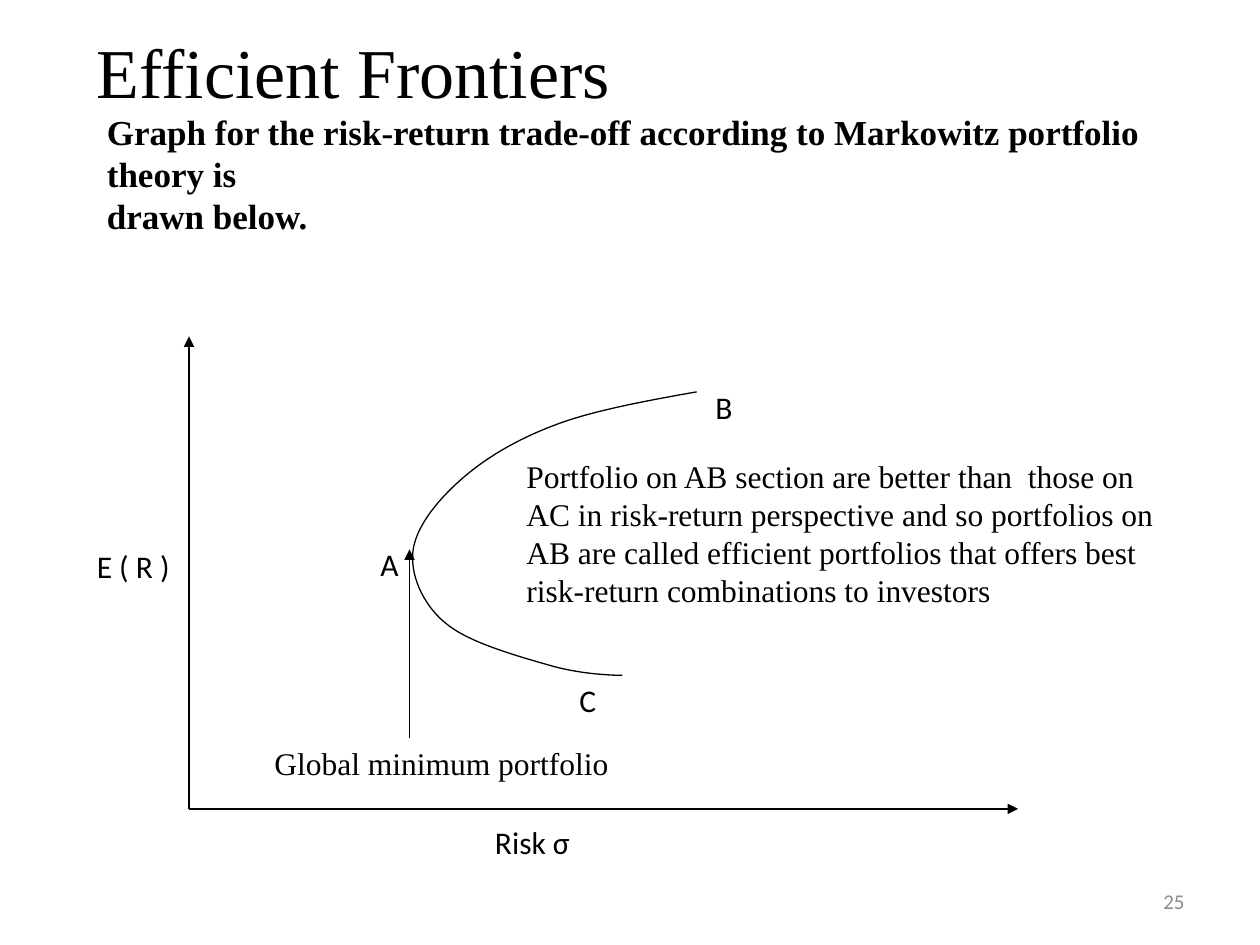
from dataclasses import dataclass

from lxml import etree
from pptx import Presentation
from pptx import util as u
from pptx.dml.color import RGBColor
from pptx.enum import shapes, text
from pptx.oxml.ns import qn


@dataclass(frozen=True)
class Theme:
    ink: RGBColor = RGBColor(0, 0, 0)
    muted: RGBColor = RGBColor(0x8C, 0x8C, 0x8C)
    serif: str = "Times New Roman"
    sans: str = "Calibri"
    title: int = 40
    lead: int = 20
    body: int = 18
    small: int = 12
    line: float = 0.75


def bezier_points(start, segments, steps=16):
    """Return points along joined cubic curves, each given as two controls and an end."""
    points = [start]
    for first, second, end in segments:
        for step in range(1, steps + 1):
            t = step / steps
            weights = ((1 - t) ** 3, 3 * t * (1 - t) ** 2, 3 * t * t * (1 - t), t ** 3)
            controls = (start, first, second, end)
            points.append(tuple(sum(w * c[axis] for w, c in zip(weights, controls))
                                for axis in (0, 1)))
        start = end
    return points


class Page:
    def __init__(self, slide, theme):
        self.shapes = slide.shapes
        self.theme = theme

    def text(self, place, *lines, size=None, font=None, color=None, bold=False,
             wrap=True, align=text.PP_ALIGN.LEFT, anchor=text.MSO_ANCHOR.TOP):
        box = self.shapes.add_textbox(*map(u.Inches, place))
        frame = box.text_frame
        frame.word_wrap = wrap
        frame.vertical_anchor = anchor
        frame.text = "\n".join(lines)
        for para in frame.paragraphs:
            para.alignment = align
            para.font.size = u.Pt(size or self.theme.body)
            para.font.name = font or self.theme.serif
            para.font.bold = bold
            para.font.color.rgb = color or self.theme.ink

    def label(self, place, words):
        self.text(place, words, font=self.theme.sans, wrap=False)

    def stroke(self, line):
        line.color.rgb = self.theme.ink
        line.width = u.Pt(self.theme.line)

    def arrow(self, start, end):
        arrow = self.shapes.add_connector(
            shapes.MSO_CONNECTOR.STRAIGHT, *map(u.Inches, start + end))
        self.stroke(arrow.line)
        properties = arrow._element.spPr
        etree.SubElement(properties.find(qn("a:ln")), qn("a:tailEnd"), type="triangle")
        etree.SubElement(properties, qn("a:effectLst"))

    def curve(self, start, segments):
        points = [tuple(map(u.Inches, point)) for point in bezier_points(start, segments)]
        builder = self.shapes.build_freeform(*points[0])
        builder.add_line_segments(points[1:], close=False)
        curve = builder.convert_to_shape()
        curve.fill.background()
        curve.shadow.inherit = False
        self.stroke(curve.line)


def main():
    deck = Presentation()
    deck.slide_width, deck.slide_height = u.Inches(10), u.Inches(7.5)
    theme = Theme()
    page = Page(deck.slides.add_slide(deck.slide_layouts[6]), theme)

    page.text((0.67, 0.17, 9, 0.78), "Efficient Frontiers", size=theme.title,
              anchor=text.MSO_ANCHOR.MIDDLE)
    page.text((0.75, 0.83, 8.6, 1.11),
              "Graph for the risk-return trade-off according to Markowitz portfolio theory is",
              "drawn below.", size=theme.lead, bold=True)

    origin = (1.5, 6.42)
    page.arrow(origin, (8.08, 6.42))
    page.arrow(origin, (1.5, 2.67))
    page.curve((5.53, 3.11), [
        ((5.14, 3.18), (4.75, 3.25), (4.44, 3.36)),
        ((4.14, 3.47), (3.89, 3.61), (3.69, 3.78)),
        ((3.5, 3.94), (3.31, 4.16), (3.28, 4.36)),
        ((3.25, 4.55), (3.35, 4.79), (3.53, 4.94)),
        ((3.71, 5.1), (4.12, 5.21), (4.36, 5.28)),
        ((4.6, 5.35), (4.85, 5.36), (4.94, 5.36)),
    ])
    page.arrow((3.25, 5.86), (3.25, 4.36))

    for place, words in (
        ((3.83, 6.48, 0.81, 0.4), "Risk σ"),
        ((0.67, 4.29, 0.86, 0.4), "E ( R )"),
        ((2.92, 4.28, 0.58, 0.4), "A"),
        ((5.58, 3.03, 0.36, 0.4), "B"),
        ((4.5, 5.36, 0.36, 0.4), "C"),
    ):
        page.label(place, words)

    page.text((2.08, 5.86, 3.25, 0.4), "Global minimum portfolio")
    page.text((4.08, 3.58, 5.33, 1.3),
              "Portfolio on AB section are better than  those on AC in risk-return "
              "perspective and so portfolios on AB are called efficient portfolios "
              "that offers best risk-return combinations to investors")
    page.text((7.17, 6.95, 2.33, 0.4), "25", size=theme.small, font=theme.sans,
              color=theme.muted, align=text.PP_ALIGN.RIGHT, anchor=text.MSO_ANCHOR.MIDDLE)

    deck.save("out.pptx")


if __name__ == "__main__":
    main()
